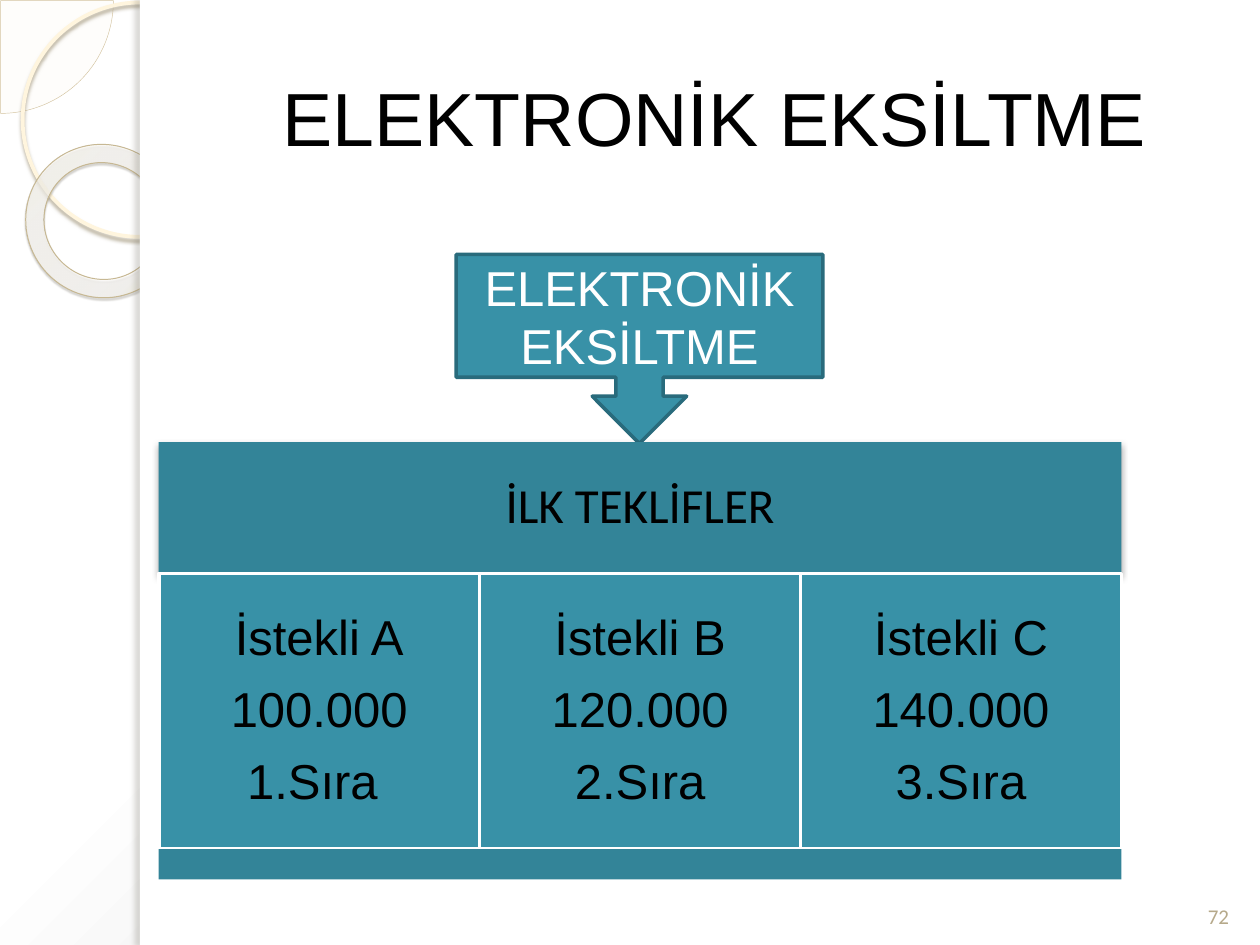
"""Build the electronic reverse auction slide with its first bids."""
from lxml import etree
from pptx import Presentation
from pptx.dml.color import RGBColor
from pptx.enum.shapes import MSO_SHAPE
from pptx.enum.text import MSO_ANCHOR, PP_ALIGN
from pptx.oxml.ns import qn
from pptx.util import Inches, Pt

RECT, OVAL, DONUT = MSO_SHAPE.RECTANGLE, MSO_SHAPE.OVAL, MSO_SHAPE.DONUT
PIE, CALLOUT = MSO_SHAPE.PIE, MSO_SHAPE.DOWN_ARROW_CALLOUT
MIDDLE, BOTTOM, CENTER = MSO_ANCHOR.MIDDLE, MSO_ANCHOR.BOTTOM, PP_ALIGN.CENTER

TITLE = "ELEKTRONİK EKSİLTME"
HEADING = "İLK TEKLİFLER"
PAGE = "72"
BIDS = [
    ("İstekli A", "100.000", "1.Sıra "),
    ("İstekli B", "120.000", "2.Sıra"),
    ("İstekli C", "140.000", "3.Sıra"),
]
TEAL, DARK_TEAL, EDGE = "3891A7", "338498", "296B7C"
BLACK, WHITE, TAN = "000000", "FFFFFF", "B6A98A"
BACKDROP = [(0, WHITE, 100), (40, WHITE, 100), (100, "C5C5C5", 100)]
RING = [(0, "FFFCF6", 70), (70, "FFFEFB", 55), (100, "F0D28E", 60)]
LEFT, WIDTH = 1.26, 7.64
HEAD_TOP, BIDS_TOP, FOOT_TOP, FOOT_HEIGHT = 3.51, 4.55, 6.74, 0.24


def rgb(color):
    """Turn a hex string into a colour."""
    return RGBColor.from_string(color)


def add_node(parent, tag, **attrs):
    """Append an XML element with the given attributes."""
    values = {name: str(value) for name, value in attrs.items()}
    return etree.SubElement(parent, qn(tag), values)


def add_color(parent, color, alpha):
    """Append a colour with an opacity in percent."""
    node = add_node(parent, "a:srgbClr", val=color)
    add_node(node, "a:alpha", val=alpha * 1000)


def set_gradient(element, stops, bounds):
    """Swap the first solid fill for a circular gradient."""
    solid = element.find(".//" + qn("a:solidFill"))
    grad = etree.Element(qn("a:gradFill"), rotWithShape="1")
    stop_list = add_node(grad, "a:gsLst")
    for pos, color, alpha in stops:
        add_color(add_node(stop_list, "a:gs", pos=pos * 1000), color, alpha)
    circle = add_node(grad, "a:path", path="circle")
    edges = {side: value * 1000 for side, value in zip("ltrb", bounds)}
    add_node(circle, "a:fillToRect", **edges)
    solid.getparent().replace(solid, grad)


def add_shape(s, kind, box, fill=None, line=None, shadow=None):
    """Add a preset shape with plain fill, line and optional shadow."""
    sp = s.shapes.add_shape(kind, *map(Inches, box))
    sp.shadow.inherit = False
    if fill:
        sp.fill.solid()
        sp.fill.fore_color.rgb = rgb(fill)
    else:
        sp.fill.background()
    if line:
        color, width = line
        sp.line.color.rgb = rgb(color)
        sp.line.width = Pt(width)
    else:
        sp.line.fill.background()
    if shadow:
        color, alpha, blur, dist, angle = shadow
        effects = sp._element.spPr.find(qn("a:effectLst"))
        outer = add_node(effects, "a:outerShdw", blurRad=Pt(blur), dist=Pt(dist),
                         dir=angle * 60000, algn="tl", rotWithShape=0)
        add_color(outer, color, alpha)
    return sp


def write(sp, lines, size, font, color, anchor=MIDDLE, inset=None, spacing=None, after=None):
    """Write centred paragraphs into a shape."""
    tf = sp.text_frame
    tf.word_wrap = True
    tf.vertical_anchor = anchor
    if inset:
        tf.margin_left = tf.margin_right = Inches(inset)
        tf.margin_top = tf.margin_bottom = Inches(inset)
    for i, text in enumerate(lines):
        p = tf.paragraphs[0] if i == 0 else tf.add_paragraph()
        p.text = text
        p.alignment = CENTER
        p.font.size = Pt(size)
        p.font.name = font
        p.font.color.rgb = rgb(color)
        if spacing:
            p.line_spacing = spacing
        if after:
            p.space_after = Pt(after)


def add_text(s, box, *args, **kwargs):
    """Add a text box with centred text."""
    write(s.shapes.add_textbox(*map(Inches, box)), *args, **kwargs)


def add_decor(s):
    """Draw the backdrop, the rings and the white content panel."""
    s.background.fill.solid()
    s.background.fill.fore_color.rgb = rgb(WHITE)
    set_gradient(s._element, BACKDROP, (-24, -20, 124, 120))
    pie = add_shape(s, PIE, (-0.89, -0.89, 1.79, 1.79), "FEFAF4", ("D3C39F", 0.25))
    pie.adjustments[0], pie.adjustments[1] = 0, 54.02
    tint = pie._element.spPr.find(qn("a:solidFill"))
    add_node(tint[0], "a:alpha", val=33000)
    add_shape(s, OVAL, (0.18, 0.02, 1.86, 1.86), None, ("FFF5DE", 2.15),
              ("B0A68F", 85, 2, 2, 90))
    ring = add_shape(s, DONUT, (0.2, 1.15, 1.23, 1.21), WHITE, ("C7B893", 0.58),
                     ("5A5444", 35, 1, 1.2, 75))
    ring.rotation = 38.6
    ring.adjustments[0] = 0.12
    set_gradient(ring._element, RING, (-408, -50, 508, 150))
    add_shape(s, RECT, (1.11, 0, 8.89, 7.5), WHITE)
    add_shape(s, RECT, (1.11, 0, 0.08, 7.5), WHITE, None, ("736F63", 25, 3, 3, 180))


def add_bids(s):
    """Draw the heading bar, one cell per bidder and the foot bar."""
    style = {"inset": 0.12, "spacing": 0.9, "after": 11}
    bar = add_shape(s, RECT, (LEFT, HEAD_TOP, WIDTH, BIDS_TOP - HEAD_TOP), DARK_TEAL,
                    None, (BLACK, 32, 3.5, 2.2, 90))
    write(bar, [HEADING], 28, "Calibri", BLACK, **style)
    cell_width = WIDTH / len(BIDS)
    for i, bid in enumerate(BIDS):
        box = (LEFT + i * cell_width, BIDS_TOP, cell_width, FOOT_TOP - BIDS_TOP)
        cell = add_shape(s, RECT, box, TEAL, (WHITE, 2))
        write(cell, bid, 28, "Arial", BLACK, **style)
    add_shape(s, RECT, (LEFT, FOOT_TOP, WIDTH, FOOT_HEIGHT), DARK_TEAL)


def main():
    """Assemble and save the slide."""
    prs = Presentation()
    prs.slide_width, prs.slide_height = Inches(10), Inches(7.5)
    s = prs.slides.add_slide(prs.slide_layouts[6])
    add_decor(s)
    add_text(s, (1.57, 0.3, 8.2, 1.25), [TITLE], 43, "Arial", BLACK)
    add_text(s, (9.42, 6.9, 0.5, 0.52), [PAGE], 12, "Calibri", TAN, anchor=BOTTOM)
    callout = add_shape(s, CALLOUT, (3.62, 2.02, 2.91, 1.5), TEAL, (EDGE, 2))
    write(callout, [TITLE], 28, "Arial", WHITE)
    add_bids(s)
    prs.save("out.pptx")


if __name__ == "__main__":
    main()
